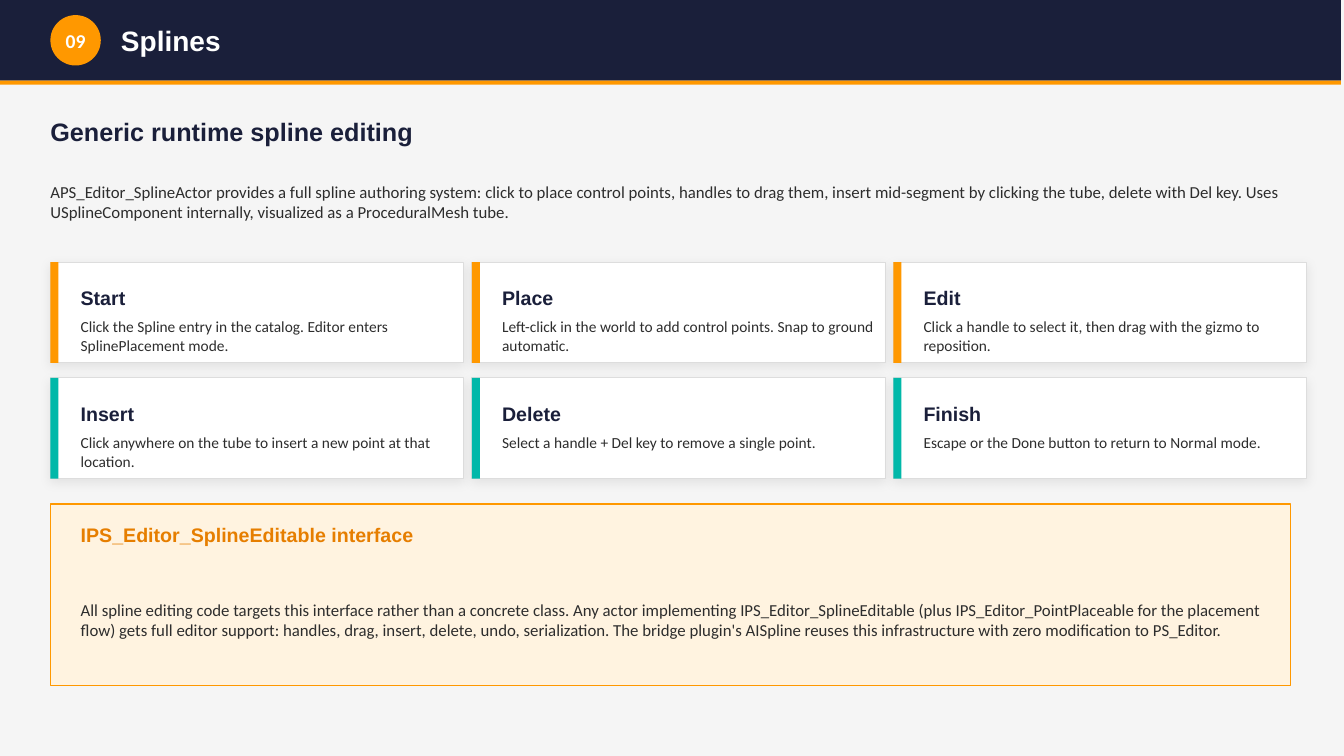
import lxml.etree
import pptx
import pptx.dml.color
import pptx.enum.shapes
import pptx.enum.text
import pptx.oxml.ns
import pptx.util
from pptx.util import Inches

NAVY, ORANGE, TEAL, WHITE, INK = "1A1F3A", "FF9800", "00B8A9", "FFFFFF", "2D2D2D"
SHAPES = pptx.enum.shapes.MSO_SHAPE
ANCHOR = pptx.enum.text.MSO_ANCHOR
ALIGN = pptx.enum.text.PP_ALIGN

INTRO = (
    "APS_Editor_SplineActor provides a full spline authoring system: click to place control points, "
    "handles to drag them, insert mid-segment by clicking the tube, delete with Del key. "
    "Uses USplineComponent internally, visualized as a ProceduralMesh tube."
)
STEP_ROWS = [
    (ORANGE, [
        ("Start", "Click the Spline entry in the catalog. Editor enters SplinePlacement mode."),
        ("Place", "Left-click in the world to add control points. Snap to ground automatic."),
        ("Edit", "Click a handle to select it, then drag with the gizmo to reposition."),
    ]),
    (TEAL, [
        ("Insert", "Click anywhere on the tube to insert a new point at that location."),
        ("Delete", "Select a handle + Del key to remove a single point."),
        ("Finish", "Escape or the Done button to return to Normal mode."),
    ]),
]
INTERFACE = (
    "All spline editing code targets this interface rather than a concrete class. "
    "Any actor implementing IPS_Editor_SplineEditable (plus IPS_Editor_PointPlaceable for the placement flow) "
    "gets full editor support: handles, drag, insert, delete, undo, serialization. "
    "The bridge plugin's AISpline reuses this infrastructure with zero modification to PS_Editor."
)


def color(value):
    """Return the colour for a hex string."""
    return pptx.dml.color.RGBColor.from_string(value)


def write(shape, text, size, fill, heading=False, bold=False, anchor=ANCHOR.MIDDLE, align=ALIGN.LEFT):
    """Put one formatted paragraph into a shape without insets."""
    frame = shape.text_frame
    frame.word_wrap = True
    frame.auto_size = pptx.enum.text.MSO_AUTO_SIZE.NONE
    frame.vertical_anchor = anchor
    frame.margin_left = frame.margin_top = frame.margin_right = frame.margin_bottom = 0
    frame.text = text
    paragraph = frame.paragraphs[0]
    paragraph.alignment = align
    paragraph.font.name = "Arial" if heading else "Calibri"
    paragraph.font.size = pptx.util.Pt(size)
    paragraph.font.bold = heading or bold
    paragraph.font.color.rgb = color(fill)


def add_text(slide, box, text, size, fill, **options):
    """Add a text box at left, top, width, height in inches."""
    write(slide.shapes.add_textbox(*map(Inches, box)), text, size, fill, **options)


def add_block(slide, box, fill, line=None, width=0.75, kind=SHAPES.RECTANGLE):
    """Add a flat filled shape with an optional outline."""
    shape = slide.shapes.add_shape(kind, *map(Inches, box))
    shape.shadow.inherit = False
    shape.fill.solid()
    shape.fill.fore_color.rgb = color(fill)
    if line:
        shape.line.color.rgb = color(line)
        shape.line.width = pptx.util.Pt(width)
    else:
        shape.line.fill.background()
    return shape


def add_soft_shadow(shape):
    """Give a shape a faint shadow falling straight down."""
    name = pptx.oxml.ns.qn
    effects = shape._element.spPr.find(name("a:effectLst"))
    shadow = lxml.etree.SubElement(
        effects, name("a:outerShdw"), blurRad=str(pptx.util.Pt(8)),
        dist=str(pptx.util.Pt(2)), dir="5400000", algn="ctr", rotWithShape="0",
    )
    tint = lxml.etree.SubElement(shadow, name("a:srgbClr"), val="000000")
    lxml.etree.SubElement(tint, name("a:alpha"), val="8000")


def add_header(slide, box, number, title):
    """Draw the title bar with its rule and numbered badge."""
    left, top, width, height = box
    add_block(slide, box, NAVY)
    add_block(slide, (left, top + height, width, 0.04), ORANGE)
    badge = add_block(slide, (left + 0.5, top + 0.15, 0.5, 0.5), ORANGE, kind=SHAPES.OVAL)
    write(badge, number, 14, WHITE, bold=True, align=ALIGN.CENTER)
    heading = slide.shapes.title
    heading.left, heading.top = Inches(left + 1.2), Inches(top + 0.15)
    heading.width, heading.height = Inches(11), Inches(0.5)
    write(heading, title, 20, WHITE, heading=True)
    slide.shapes._spTree.append(heading._element)


def add_intro(slide, box, heading, text):
    """Place the section heading above its description."""
    left, top, width, height = box
    add_text(slide, (left, top, width, 0.4), heading, 18, NAVY, heading=True)
    add_text(slide, (left, top + 0.5, width, height - 0.5), text, 12, INK)


def add_card(slide, box, accent, heading, text):
    """Draw one step card with a coloured left edge."""
    left, top, width, height = box
    add_soft_shadow(add_block(slide, box, WHITE, "DDDDDD"))
    add_block(slide, (left, top, 0.08, height), accent)
    add_text(slide, (left + 0.3, top + 0.15, width - 0.4, 0.4), heading, 14, NAVY, heading=True)
    add_text(slide, (left + 0.3, top + 0.55, width - 0.4, 0.4), text, 11, INK, anchor=ANCHOR.TOP)


def add_card_grid(slide, box, rows):
    """Lay out rows of step cards on an even grid."""
    left, top, width, height = box
    gap_x, gap_y = 0.08, 0.15
    for row, (accent, cards) in enumerate(rows):
        card_width = (width - gap_x * (len(cards) - 1)) / len(cards)
        card_height = (height - gap_y * (len(rows) - 1)) / len(rows)
        for column, (heading, text) in enumerate(cards):
            card_left = left + column * (card_width + gap_x)
            card_top = top + row * (card_height + gap_y)
            add_card(slide, (card_left, card_top, card_width, card_height), accent, heading, text)


def add_callout(slide, box, heading, text):
    """Draw the outlined note with heading and text."""
    left, top, width, height = box
    add_block(slide, box, "FFF3E0", ORANGE, 1)
    add_text(slide, (left + 0.3, top + 0.1, width - 0.3, 0.4), heading, 14, "E67E00", heading=True)
    add_text(slide, (left + 0.3, top + 0.5, width - 0.3, height - 0.5), text, 12, INK)


def main():
    """Build and save the presentation."""
    presentation = pptx.Presentation()
    presentation.slide_width, presentation.slide_height = Inches(13.33), Inches(7.5)
    slide = presentation.slides.add_slide(presentation.slide_layouts[5])
    slide.background.fill.solid()
    slide.background.fill.fore_color.rgb = color("F5F5F5")
    add_header(slide, (0, 0, 13.3, 0.8), "09", "Splines")
    add_intro(slide, (0.5, 1.1, 12.3, 1.3), "Generic runtime spline editing", INTRO)
    add_card_grid(slide, (0.5, 2.6, 12.46, 2.15), STEP_ROWS)
    add_callout(slide, (0.5, 5, 12.3, 1.8), "IPS_Editor_SplineEditable interface", INTERFACE)
    presentation.save("out.pptx")


if __name__ == "__main__":
    main()
